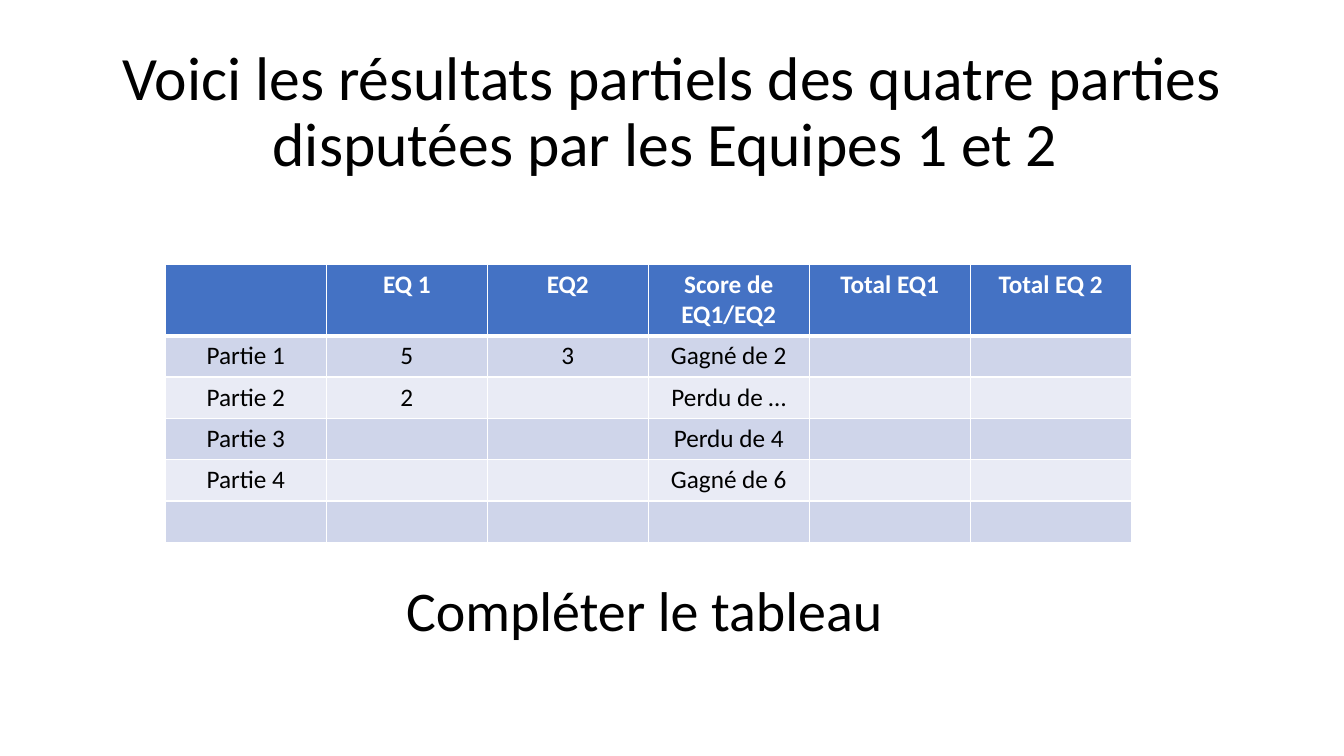
from dataclasses import dataclass

import pptx
import pptx.dml.color
import pptx.enum.text
import pptx.oxml
import pptx.oxml.ns
import pptx.util
from pptx.util import Inches


@dataclass(frozen=True)
class Theme:
    font: str = "Calibri"
    text: str = "000000"
    white: str = "FFFFFF"
    header: str = "4472C4"
    bands: tuple = ("CFD5EA", "E9EBF5")
    title_size: int = 44
    prompt_size: int = 40
    table_size: int = 18
    border: int = 1
    header_rule: int = 3


THEME = Theme()

RESULTS = [
    ["", "EQ 1", "EQ2", "Score de EQ1/EQ2", "Total EQ1", "Total EQ 2"],
    ["Partie 1", "5", "3", "Gagné de 2", "", ""],
    ["Partie 2", "2", "", "Perdu de …", "", ""],
    ["Partie 3", "", "", "Perdu de 4", "", ""],
    ["Partie 4", "", "", "Gagné de 6", "", ""],
    ["", "", "", "", "", ""],
]


def rgb(color):
    return pptx.dml.color.RGBColor.from_string(color)


def set_text(text_frame, text, size, color=THEME.text, bold=False):
    """Write one centred paragraph in the theme font."""
    text_frame.text = text
    paragraph = text_frame.paragraphs[0]
    paragraph.alignment = pptx.enum.text.PP_ALIGN.CENTER
    for font in [paragraph.font] + [run.font for run in paragraph.runs]:
        font.name = THEME.font
        font.size = pptx.util.Pt(size)
        font.bold = bold
        font.color.rgb = rgb(color)
    return paragraph


def set_borders(cell, widths):
    """Draw white borders; widths maps L, R, T and B to points."""
    properties = cell._tc.get_or_add_tcPr()
    namespace = pptx.oxml.ns.nsdecls("a")
    for index, (side, width) in enumerate(widths.items()):
        line = pptx.oxml.parse_xml(
            f'<a:ln{side} {namespace} w="{pptx.util.Pt(width)}"><a:solidFill>'
            f'<a:srgbClr val="{THEME.white}"/></a:solidFill></a:ln{side}>'
        )
        properties.insert(index, line)


def add_title(slide, left, top, width, height):
    title = slide.shapes.title
    title.left, title.top, title.width, title.height = left, top, width, height
    title.text_frame.vertical_anchor = pptx.enum.text.MSO_ANCHOR.MIDDLE
    paragraph = set_text(
        title.text_frame,
        "Voici les résultats partiels des quatre parties "
        "disputées par les Equipes 1 et 2 ",
        THEME.title_size,
    )
    paragraph.line_spacing = 0.9


def add_results_table(slide, left, top, width, height):
    row_count, column_count = len(RESULTS), len(RESULTS[0])
    table = slide.shapes.add_table(
        row_count, column_count, left, top, width, height
    ).table
    for row_index, values in enumerate(RESULTS):
        is_header = row_index == 0
        fill = THEME.header if is_header else THEME.bands[(row_index - 1) % 2]
        for column_index, value in enumerate(values):
            cell = table.cell(row_index, column_index)
            cell.fill.solid()
            cell.fill.fore_color.rgb = rgb(fill)
            set_text(
                cell.text_frame,
                value,
                THEME.table_size,
                THEME.white if is_header else THEME.text,
                is_header,
            )
            widths = dict.fromkeys("LRTB", THEME.border)
            if is_header:
                widths["B"] = THEME.header_rule
            elif row_index == 1:
                widths["T"] = THEME.header_rule
            set_borders(cell, widths)


def add_prompt(slide, left, top, width, height):
    text_frame = slide.shapes.add_textbox(left, top, width, height).text_frame
    text_frame.word_wrap = True
    text_frame.auto_size = pptx.enum.text.MSO_AUTO_SIZE.SHAPE_TO_FIT_TEXT
    set_text(text_frame, "Compléter le tableau", THEME.prompt_size)


def main():
    presentation = pptx.Presentation()
    presentation.slide_width = Inches(13.33)
    presentation.slide_height = Inches(7.5)
    title_only = presentation.slide_layouts[5]
    slide = presentation.slides.add_slide(title_only)
    add_title(slide, Inches(0.92), Inches(0.4), Inches(11.5), Inches(1.45))
    add_results_table(
        slide, Inches(1.64), Inches(2.62), Inches(9.58), Inches(6 * 0.41)
    )
    add_prompt(slide, Inches(1.64), Inches(5.66), Inches(9.5), Inches(0.77))
    presentation.save("out.pptx")


if __name__ == "__main__":
    main()
